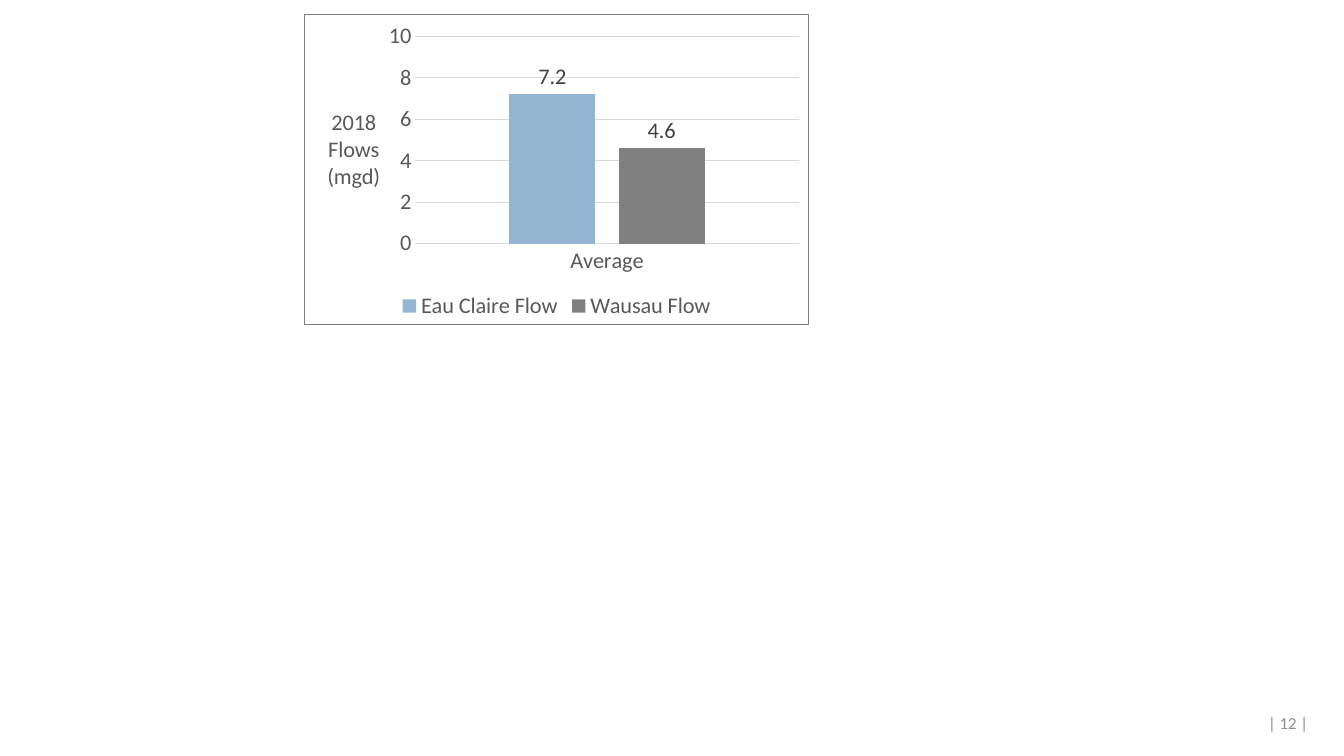
import pptx
import pptx.chart.data
import pptx.dml.color
import pptx.enum.chart
import pptx.enum.text
import pptx.oxml
import pptx.oxml.ns
import pptx.util
from pptx.util import Cm, Pt

FONT = "Calibri"
WHITE = pptx.dml.color.RGBColor(0xFF, 0xFF, 0xFF)
BLUE = pptx.dml.color.RGBColor(0x94, 0xB6, 0xD2)
GRAY = pptx.dml.color.RGBColor(0x80, 0x80, 0x80)
GRID_GRAY = pptx.dml.color.RGBColor(0xD9, 0xD9, 0xD9)
TEXT_GRAY = pptx.dml.color.RGBColor(0x59, 0x59, 0x59)
LABEL_GRAY = pptx.dml.color.RGBColor(0x40, 0x40, 0x40)
PAGE_GRAY = pptx.dml.color.RGBColor(0x8C, 0x8C, 0x8C)


def set_font(font, size, color):
    font.name = FONT
    font.size = Pt(size)
    font.bold = False
    font.color.rgb = color


def set_layout(element, index, target, **fractions):
    """Place a chart part by fractions of the chart's width and height."""
    for old_layout in element.findall(pptx.oxml.ns.qn("c:layout")):
        element.remove(old_layout)
    values = "".join(f'<c:{key} val="{value}"/>' for key, value in fractions.items())
    element.insert(index, pptx.oxml.parse_xml(
        f'<c:layout {pptx.oxml.ns.nsdecls("c")}><c:manualLayout>{target}'
        f'<c:xMode val="edge"/><c:yMode val="edge"/>{values}'
        '</c:manualLayout></c:layout>'))


presentation = pptx.Presentation()
presentation.slide_width = Cm(33.87)
presentation.slide_height = Cm(19.05)
slide = presentation.slides.add_slide(presentation.slide_layouts[6])
slide.background.fill.solid()
slide.background.fill.fore_color.rgb = WHITE

# Page number
page_number = slide.shapes.add_textbox(Cm(25.6), Cm(17.7), Cm(7.62), Cm(1.02))
page_number.text_frame.word_wrap = True
page_number.text_frame.vertical_anchor = pptx.enum.text.MSO_ANCHOR.MIDDLE
paragraph = page_number.text_frame.paragraphs[0]
paragraph.text = "| 12 |"
paragraph.alignment = pptx.enum.text.PP_ALIGN.RIGHT
set_font(paragraph.font, 12, PAGE_GRAY)

# Flow chart
flow_data = pptx.chart.data.CategoryChartData(number_format="#,##0.0")
flow_data.categories = ["Average"]
flow_data.add_series("Eau Claire Flow", [7.2])
flow_data.add_series("Wausau Flow", [4.6])
chart = slide.shapes.add_chart(
    pptx.enum.chart.XL_CHART_TYPE.COLUMN_CLUSTERED,
    Cm(7.65), Cm(0.36), Cm(12.75), Cm(7.82), flow_data).chart
set_font(chart.font, 16, TEXT_GRAY)
chart.has_title = False
chart.has_legend = True
chart.legend.position = pptx.enum.chart.XL_LEGEND_POSITION.BOTTOM
chart.legend.include_in_layout = False
set_font(chart.legend.font, 16, TEXT_GRAY)

chart_space = chart.element
chart_space.find(pptx.oxml.ns.qn("c:chart")).addnext(pptx.oxml.parse_xml(
    f'<c:spPr {pptx.oxml.ns.nsdecls("c", "a")}>'
    f'<a:solidFill><a:srgbClr val="{WHITE}"/></a:solidFill>'
    f'<a:ln w="{Pt(0.75)}"><a:solidFill><a:srgbClr val="{GRAY}"/></a:solidFill></a:ln>'
    '</c:spPr>'))

plot = chart.plots[0]
plot.gap_width = 219
plot.overlap = -27
plot.vary_by_categories = False
for series, color in zip(plot.series, (BLUE, GRAY)):
    series.format.fill.solid()
    series.format.fill.fore_color.rgb = color
    labels = series.data_labels
    labels.show_value = True
    labels.number_format = "#,##0.0"
    labels.number_format_is_linked = False
    labels.position = pptx.enum.chart.XL_LABEL_POSITION.OUTSIDE_END
    set_font(labels.font, 16, LABEL_GRAY)

# Axes
for axis in (chart.category_axis, chart.value_axis):
    axis.major_tick_mark = pptx.enum.chart.XL_TICK_MARK.NONE
    axis.minor_tick_mark = pptx.enum.chart.XL_TICK_MARK.NONE
    set_font(axis.tick_labels.font, 16, TEXT_GRAY)

value_axis = chart.value_axis
value_axis.minimum_scale = 0
value_axis.maximum_scale = 10
value_axis.major_unit = 2
value_axis.tick_labels.number_format = "#,##0;[Red]#,##0"
value_axis.tick_labels.number_format_is_linked = False
value_axis.format.line.fill.background()
value_axis.has_major_gridlines = True
for line in (chart.category_axis.format.line, value_axis.major_gridlines.format.line):
    line.color.rgb = GRID_GRAY
    line.width = Pt(0.75)

title_frame = value_axis.axis_title.text_frame
title_frame.text = "2018\nFlows\n(mgd)"
for paragraph in title_frame.paragraphs:
    set_font(paragraph.font, 16, TEXT_GRAY)
title = value_axis.axis_title._element
body = next(title.iter(pptx.oxml.ns.qn("a:bodyPr")))
body.set("rot", "0")
body.set("vert", "horz")

set_layout(title, 1, "", x=0.04, y=0.29)
plot_area = next(chart_space.iter(pptx.oxml.ns.qn("c:plotArea")))
set_layout(plot_area, 0, '<c:layoutTarget val="inner"/>', x=0.22, y=0.07, w=0.76, h=0.67)

presentation.save("out.pptx")
